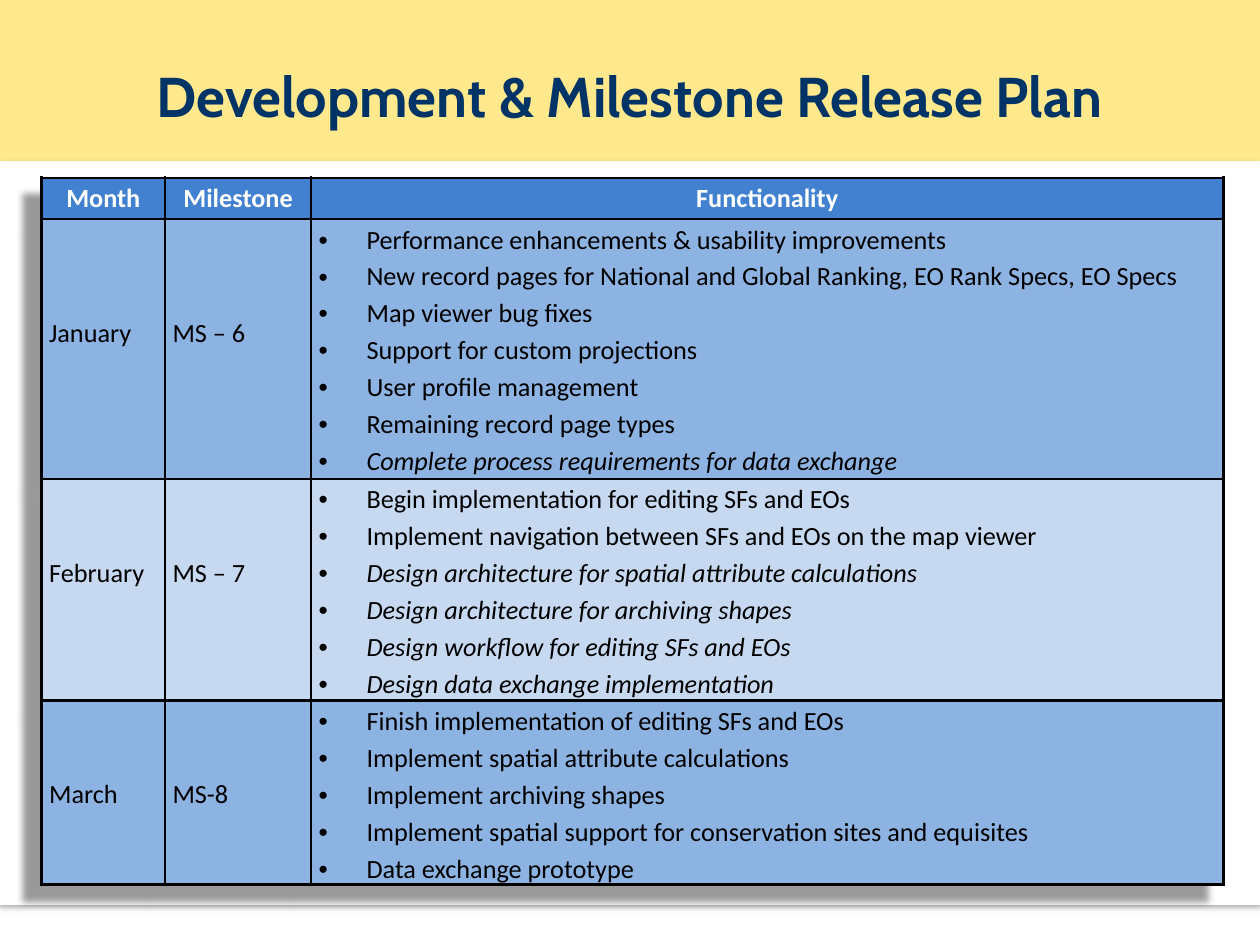
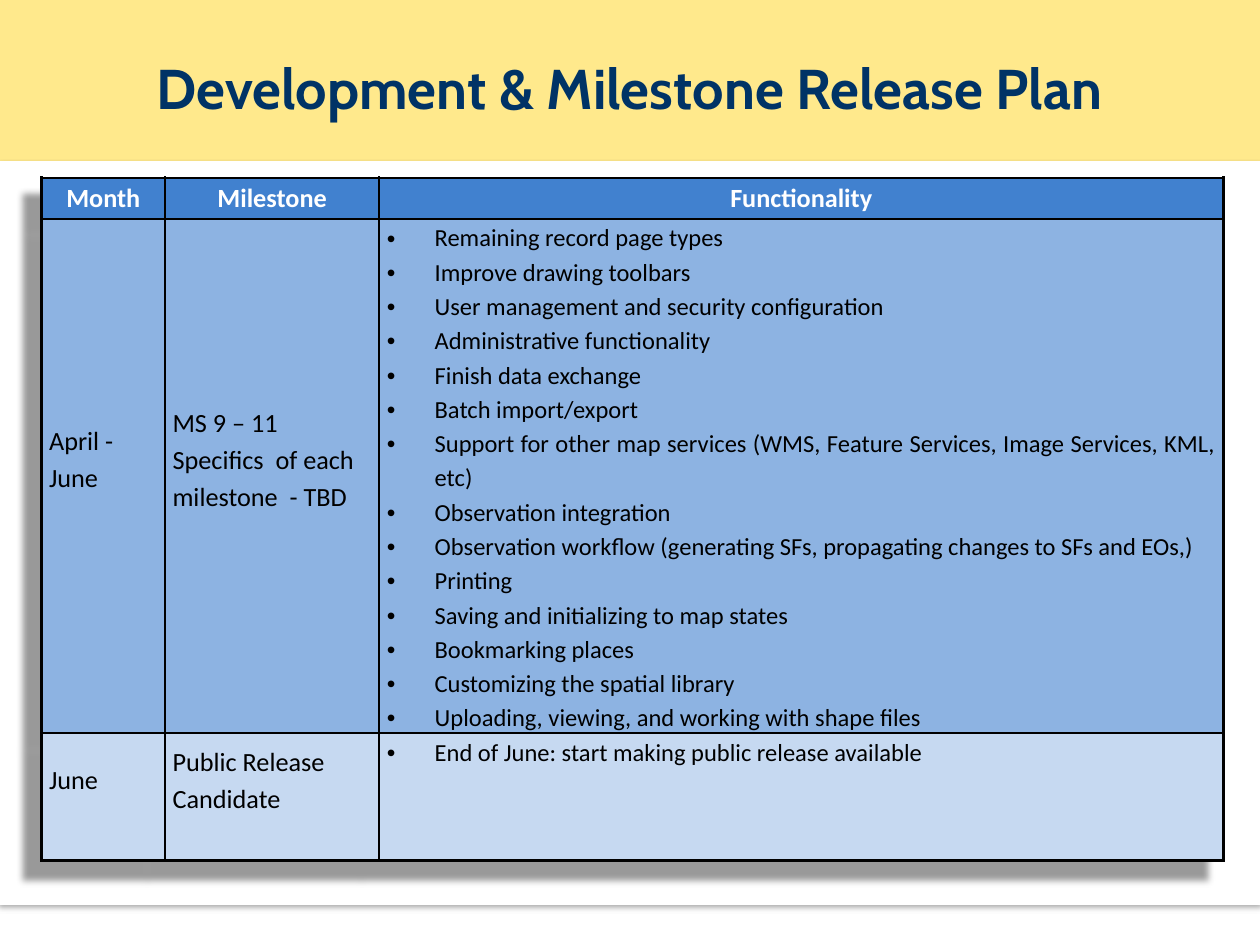
from dataclasses import dataclass

from lxml import etree
from pptx import Presentation
from pptx.dml.color import RGBColor
from pptx.enum import shapes, text
from pptx.oxml import ns
from pptx.util import Inches, Pt


# Shared look
@dataclass(frozen=True)
class Theme:
    band: str = "FFE98C"
    paper: str = "FFFFFF"
    title: str = "003366"
    header: str = "4181CF"
    row_fills: tuple = ("8DB3E2", "C6D9F1")
    ink: str = "000000"
    title_font: str = "Cabin"
    table_font: str = "Calibri"
    title_size: int = 32
    table_size: int = 15
    border: float = 1.5
    line_spacing: float = 1.15


THEME = Theme()
HEADINGS = ("Month", "Milestone", "Functionality")
HEADER_HEIGHT = 0.33
BULLET_INDENT = 0.38
SIDE_MARGIN = 0.06


@dataclass
class Release:
    month: str
    milestone: tuple
    features: tuple
    height: float
    planned: tuple = ()      # set in italics after the features
    label_lift: float = 0.29  # space under the month and milestone labels


WINTER = (
    Release("January", ("MS – 6",), (
        "Performance enhancements & usability improvements",
        "New record pages for National and Global Ranking, EO Rank Specs, EO Specs",
        "Map viewer bug fixes",
        "Support for custom projections",
        "User profile management",
        "Remaining record page types",
    ), 2.06, planned=("Complete process requirements for data exchange",)),
    Release("February", ("MS – 7",), (
        "Begin implementation for editing SFs and EOs",
        "Implement navigation between SFs and EOs on the map viewer",
    ), 1.76, planned=(
        "Design architecture for spatial attribute calculations",
        "Design architecture for archiving shapes",
        "Design workflow for editing SFs and EOs",
        "Design data exchange implementation",
    )),
    Release("March", ("MS-8",), (
        "Finish implementation of editing SFs and EOs",
        "Implement spatial attribute calculations",
        "Implement archiving shapes",
        "Implement spatial support for conservation sites and equisites",
        "Data exchange prototype",
    ), 1.46, label_lift=0),
)

SPRING = (
    Release("April - June", ("MS 9 – 11", "Specifics  of each milestone  - TBD"), (
        "Remaining record page types",
        "Improve drawing toolbars",
        "User management and security configuration",
        "Administrative functionality",
        "Finish data exchange",
        "Batch import/export",
        "Support for other map services (WMS, Feature Services, Image Services, KML, etc)",
        "Observation integration",
        "Observation workflow (generating SFs, propagating changes to SFs and EOs,)",
        "Printing",
        "Saving and initializing to map states",
        "Bookmarking places",
        "Customizing the spatial library",
        "Uploading, viewing, and working with shape files",
    ), 4.08),
    Release("June", ("Public Release", "Candidate")[:0] or ("Public Release Candidate",), (
        "End of June: start making public release available",
    ), 1.01),
)


# XML helpers
def sub(parent, tag, **attributes):
    return etree.SubElement(parent, ns.qn(tag), attributes)


def add_shadow(parent, blur, distance, angle, opacity):
    effects = sub(parent, "a:effectLst")
    shadow = sub(effects, "a:outerShdw", blurRad=str(Pt(blur)), dist=str(Pt(distance)),
                 dir=str(angle * 60000), algn="ctr", rotWithShape="0")
    color = sub(shadow, "a:srgbClr", val=THEME.ink)
    sub(color, "a:alpha", val=str(opacity * 1000))
    return effects


def add_borders(cell):
    properties = cell._tc.get_or_add_tcPr()
    for position, side in enumerate(("a:lnL", "a:lnR", "a:lnT", "a:lnB")):
        line = etree.Element(ns.qn(side), w=str(Pt(THEME.border)))
        sub(sub(line, "a:solidFill"), "a:srgbClr", val=THEME.ink)
        properties.insert(position, line)


def add_bullet(paragraph):
    properties = paragraph._p.get_or_add_pPr()
    properties.set("marL", str(Inches(BULLET_INDENT)))
    properties.set("indent", str(-Inches(BULLET_INDENT)))
    sub(properties, "a:buFont", typeface="Arial")
    sub(properties, "a:buChar", char="•")


# Text helpers
def set_font(paragraph, name, size, color, bold=False, italic=False):
    font = paragraph.font
    font.name, font.size = name, Pt(size)
    font.bold, font.italic = bold, italic
    font.color.rgb = RGBColor.from_string(color)


def write_cell(cell, lines, fill, align=text.PP_ALIGN.LEFT, anchor=text.MSO_ANCHOR.TOP,
               color=THEME.ink, size=THEME.table_size, bold=False, bullets=False,
               italic_from=None, bottom=0):
    cell.fill.solid()
    cell.fill.fore_color.rgb = RGBColor.from_string(fill)
    add_borders(cell)
    cell.margin_left = cell.margin_right = Inches(SIDE_MARGIN)
    cell.margin_top, cell.margin_bottom = 0, Inches(bottom)
    cell.vertical_anchor = anchor
    frame = cell.text_frame
    for index, line in enumerate(lines):
        paragraph = frame.add_paragraph() if index else frame.paragraphs[0]
        paragraph.text = line
        paragraph.alignment = align
        paragraph.line_spacing = THEME.line_spacing
        if bullets:
            add_bullet(paragraph)
        italic = italic_from is not None and index >= italic_from
        set_font(paragraph, THEME.table_font, size, color, bold, italic)


# Slide parts
def add_band(slide, top, height, fill, outlined=False):
    band = slide.shapes.add_shape(shapes.MSO_SHAPE.RECTANGLE, 0, Inches(top),
                                  Inches(10), Inches(height))
    band.fill.solid()
    band.fill.fore_color.rgb = RGBColor.from_string(fill)
    if outlined:
        band.line.color.rgb = RGBColor.from_string(fill)
        band.line.width = Pt(0.75)
    else:
        band.line.fill.background()
    add_shadow(band._element.spPr, blur=3.1, distance=1.8, angle=90, opacity=35)


def add_title(slide, title, top):
    box = slide.shapes.add_textbox(Inches(0.5), Inches(top), Inches(9), Inches(0.79))
    frame = box.text_frame
    frame.word_wrap = True
    frame.vertical_anchor = text.MSO_ANCHOR.MIDDLE
    heading = frame.paragraphs[0]
    heading.text = title
    heading.alignment = text.PP_ALIGN.CENTER
    set_font(heading, THEME.title_font, THEME.title_size, THEME.title, bold=True)


def add_release_table(slide, releases, widths, feature_size):
    heights = [HEADER_HEIGHT] + [release.height for release in releases]
    table = slide.shapes.add_table(len(heights), len(widths), Inches(0.33), Inches(1.41),
                                   Inches(sum(widths)), Inches(sum(heights))).table
    table.horz_banding = False
    properties = table._tbl.tblPr
    properties.insert(0, add_shadow(properties, blur=4, distance=14, angle=135, opacity=40))
    for column, width in zip(table.columns, widths):
        column.width = Inches(width)
    for row, height in zip(table.rows, heights):
        row.height = Inches(height)

    # Header row
    for column, heading in enumerate(HEADINGS):
        write_cell(table.cell(0, column), [heading], THEME.header,
                   align=text.PP_ALIGN.CENTER, color=THEME.paper, bold=True)

    # One row per release
    for row, release in enumerate(releases, start=1):
        fill = THEME.row_fills[(row - 1) % 2]
        for column, label in enumerate(([release.month], release.milestone)):
            write_cell(table.cell(row, column), label, fill,
                       anchor=text.MSO_ANCHOR.MIDDLE, bottom=release.label_lift)
        write_cell(table.cell(row, 2), release.features + release.planned, fill,
                   align=text.PP_ALIGN.JUSTIFY, size=feature_size, bullets=True,
                   italic_from=len(release.features))


def add_plan_slide(deck, releases, title_top, widths, feature_size):
    slide = deck.slides.add_slide(deck.slide_layouts[6])
    add_band(slide, 0, 1.28, THEME.band)
    add_band(slide, 1.28, 5.9, THEME.paper, outlined=True)
    add_title(slide, "Development & Milestone Release Plan", title_top)
    add_release_table(slide, releases, widths, feature_size)


def main():
    deck = Presentation()
    deck.slide_width, deck.slide_height = Inches(10), Inches(7.5)
    add_plan_slide(deck, WINTER, 0.36, (0.98, 1.16, 7.24), feature_size=15)
    add_plan_slide(deck, SPRING, 0.3, (0.98, 1.7, 6.7), feature_size=14)
    deck.save("out.pptx")


if __name__ == "__main__":
    main()
